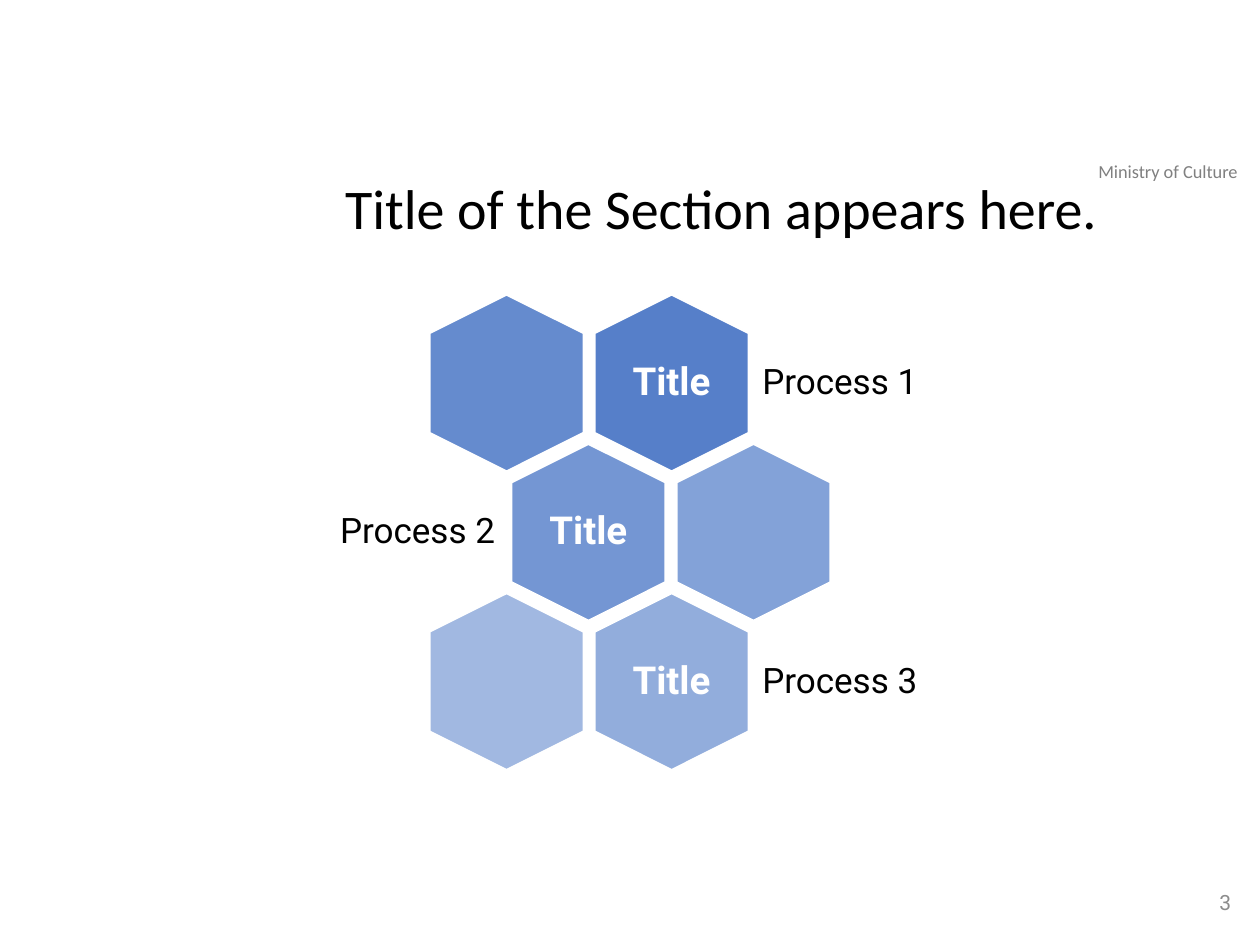
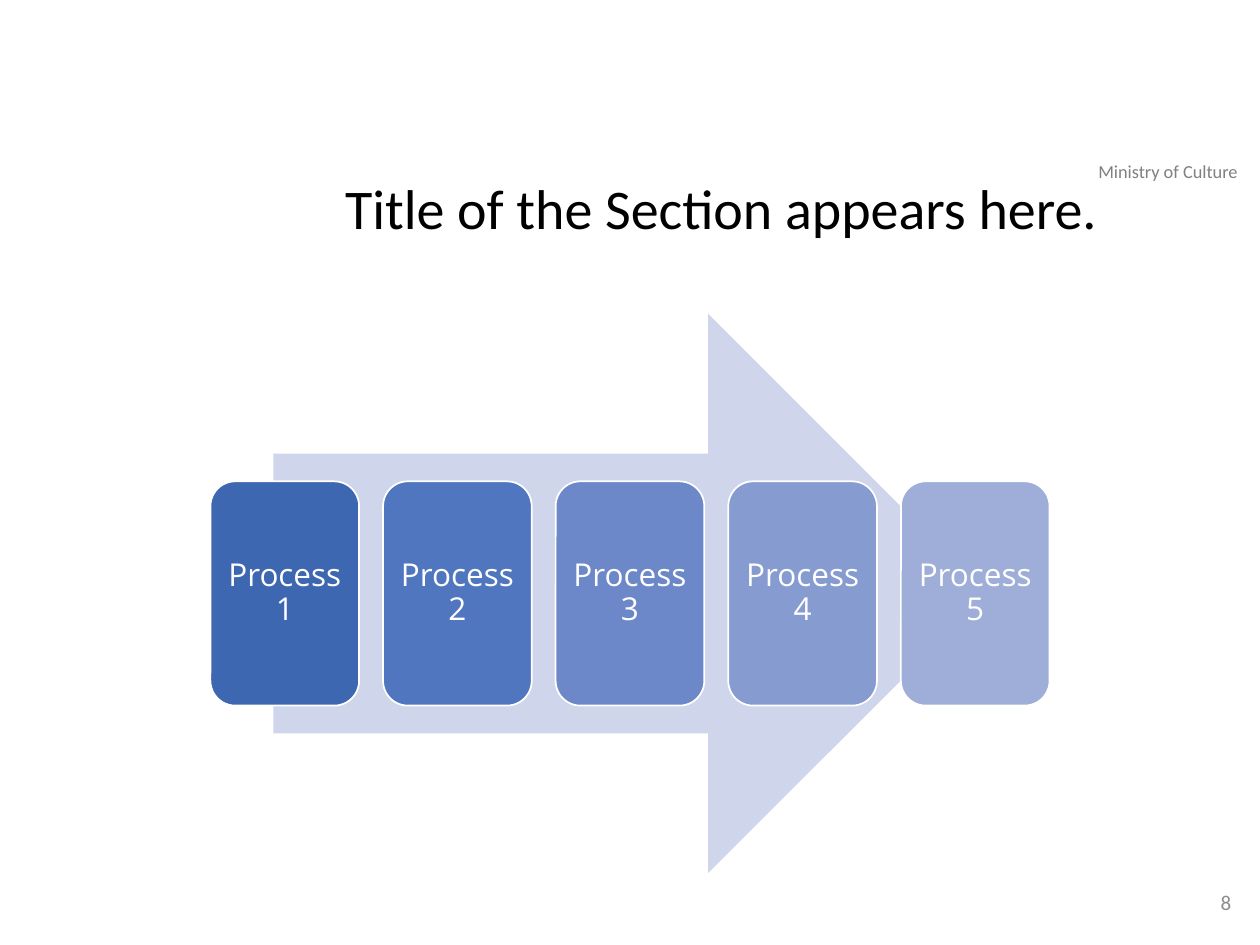
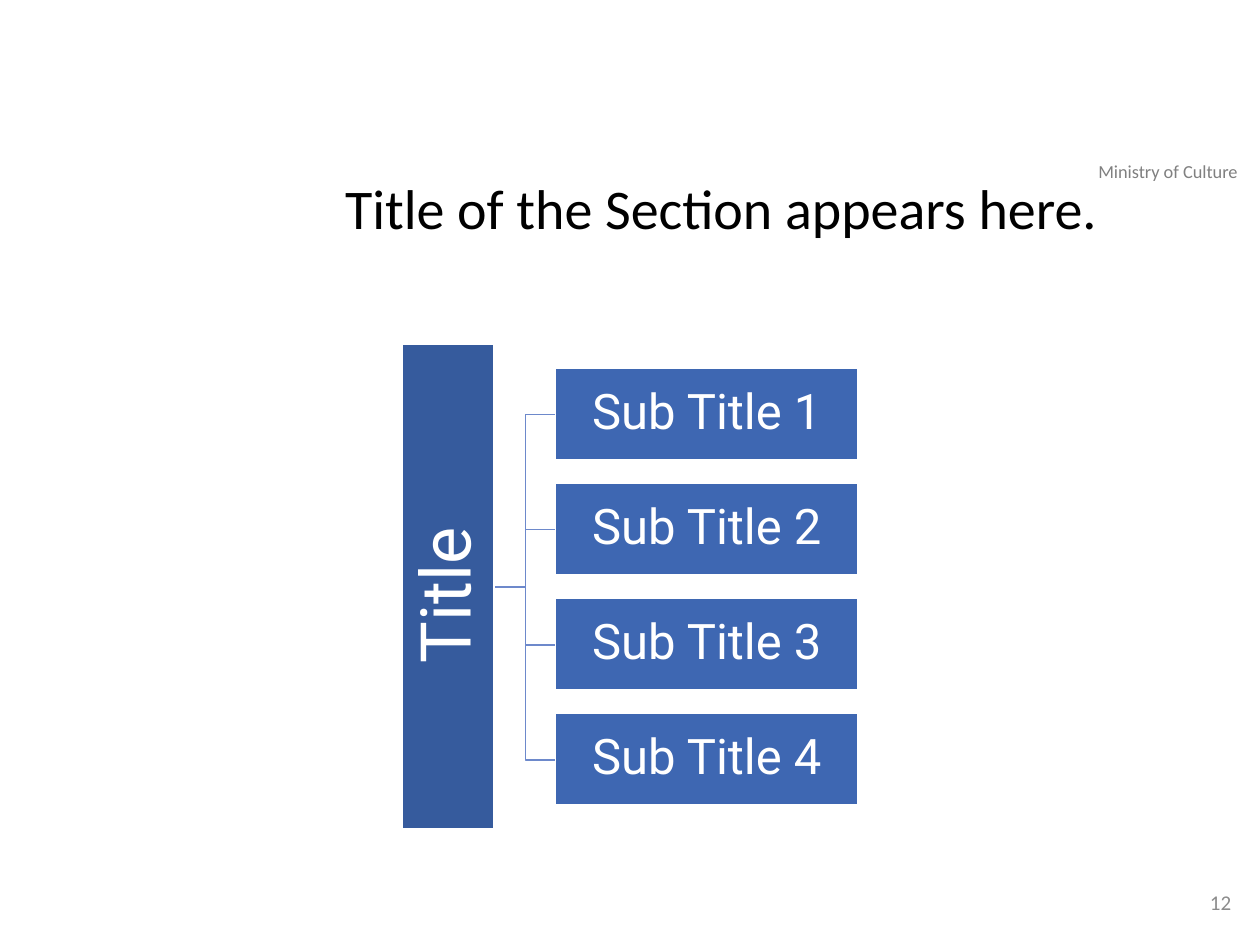
"""Build three process-diagram slides that share one heading, ministry label and page number."""
from dataclasses import dataclass

from lxml import etree
from pptx import Presentation
from pptx import util as u
from pptx.dml.color import RGBColor
from pptx.enum import shapes, text
from pptx.oxml.ns import qn


@dataclass(frozen=True)
class Theme:
    white: str = "FFFFFF"
    black: str = "000000"
    ministry: str = "808080"
    page: str = "8C8C8C"
    hexagon: str = "4472C4"
    arrow: str = "CFD5EA"
    steps: tuple = ("3E67B2", "5176C0", "6C88C8", "869BD0", "9FAED8")
    trunk: str = "365B9D"
    branch: str = "3E67B2"
    link: str = "6D89CB"
    heading_size: float = 32
    ministry_size: float = 10.5
    page_size: float = 12
    hexagon_size: float = 22
    label_size: float = 20
    step_size: float = 18
    trunk_size: float = 40
    branch_size: float = 28
    plain: str = "Calibri"
    display: str = "Roboto"
    step_font: str = "Open Sans"


theme = Theme()
LEFT, CENTER, RIGHT = text.PP_ALIGN.LEFT, text.PP_ALIGN.CENTER, text.PP_ALIGN.RIGHT
TOP, MIDDLE = text.MSO_ANCHOR.TOP, text.MSO_ANCHOR.MIDDLE


def write(holder, words, size, color=theme.white, font=theme.display, bold=False,
          align=CENTER, anchor=MIDDLE, inset=(0.1, 0.05), spacing=0.9):
    frame = holder.text_frame
    frame.word_wrap = True
    frame.vertical_anchor = anchor
    frame.margin_left = frame.margin_right = u.Inches(inset[0])
    frame.margin_top = frame.margin_bottom = u.Inches(inset[1])
    line = frame.paragraphs[0]
    line.alignment = align
    line.line_spacing = spacing
    run = line.add_run()
    run.text = words
    run.font.size = u.Pt(size)
    run.font.name = font
    run.font.bold = bold
    run.font.color.rgb = RGBColor.from_string(color)


def draw(slide, kind, box, fill, outline=theme.white, turn=0, opacity=100):
    figure = slide.shapes.add_shape(kind, *map(u.Inches, box))
    figure.shadow.inherit = False
    figure.rotation = turn
    figure.fill.solid()
    figure.fill.fore_color.rgb = RGBColor.from_string(fill)
    if opacity < 100:
        tint = figure._element.spPr.find(qn("a:solidFill"))[0]
        etree.SubElement(tint, qn("a:alpha"), val=str(opacity * 1000))
    if outline:
        figure.line.color.rgb = RGBColor.from_string(outline)
        figure.line.width = u.Pt(1)
    else:
        figure.line.fill.background()
    return figure


deck = Presentation()
deck.slide_width, deck.slide_height = u.Inches(10), u.Inches(7.5)

pages = []
for number, number_font in (("3", theme.display), ("8", theme.plain), ("12", theme.plain)):
    slide = deck.slides.add_slide(deck.slide_layouts[6])
    ministry = slide.shapes.add_textbox(*map(u.Inches, (8.18, 1.22, 2.18, 0.28)))
    write(ministry, "Ministry of Culture", theme.ministry_size, theme.ministry,
          theme.plain, anchor=TOP, spacing=1.0)
    heading = slide.shapes.add_textbox(*map(u.Inches, (2.64, 1.39, 6.62, 0.79)))
    write(heading, "Title of the Section appears here.", theme.heading_size, theme.black,
          theme.plain, align=LEFT, anchor=TOP)
    page = slide.shapes.add_textbox(*map(u.Inches, (7.62, 6.96, 2.25, 0.4)))
    write(page, number, theme.page_size, theme.page, number_font, align=RIGHT, spacing=1.0)
    pages.append(slide)

honeycomb, arrow_flow, hierarchy = pages

honeycomb_rows = (
    (3.32, (82, 90), 1, "Process 1", 5.97, 1.56, LEFT),
    (3.97, (74, 66), 0, "Process 2", 2.5, 1.51, RIGHT),
    (3.32, (50, 58), 1, "Process 3", 5.97, 1.56, LEFT),
)
for row, (left, opacities, titled, process, label_left, label_width, align) in enumerate(honeycomb_rows):
    top = 2.43 + row * 1.185
    for column, opacity in enumerate(opacities):
        draw(honeycomb, shapes.MSO_SHAPE.HEXAGON, (left + column * 1.31, top, 1.4, 1.22),
             theme.hexagon, turn=90, opacity=opacity)
    title = honeycomb.shapes.add_textbox(
        *map(u.Inches, (left + titled * 1.31 + 0.28, top + 0.13, 0.84, 0.96)))
    write(title, "Title", theme.hexagon_size, bold=True, inset=(0.09, 0.09))
    label = honeycomb.shapes.add_textbox(
        *map(u.Inches, (label_left, top + 0.19, label_width, 0.84)))
    write(label, process, theme.label_size, theme.black, align=align, inset=(0.08, 0.08))

draw(arrow_flow, shapes.MSO_SHAPE.RIGHT_ARROW, (2.17, 2.49, 5.67, 4.44), theme.arrow, outline=None)
for index, color in enumerate(theme.steps):
    step = draw(arrow_flow, shapes.MSO_SHAPE.ROUNDED_RECTANGLE,
                (1.67 + index * 1.37, 3.82, 1.18, 1.78), color)
    write(step, f"Process {index + 1}", theme.step_size, font=theme.step_font, inset=(0.07, 0.07))

branch_tops = [2.92 + index * (5.66 - 2.92) / 3 for index in range(4)]
for top in branch_tops:
    middle = top + 0.37
    bends = [(4.17, 4.66), (4.17, middle), (4.41, middle)]
    route = hierarchy.shapes.build_freeform(u.Inches(3.93), u.Inches(4.66))
    route.add_line_segments([(u.Inches(x), u.Inches(y)) for x, y in bends], close=False)
    link = route.convert_to_shape()
    link.shadow.inherit = False
    link.fill.background()
    link.line.color.rgb = RGBColor.from_string(theme.link)
    link.line.width = u.Pt(1)

trunk = draw(hierarchy, shapes.MSO_SHAPE.RECTANGLE, (1.63, 4.29, 3.85, 0.73), theme.trunk, turn=270)
write(trunk, "Title ", theme.trunk_size, inset=(0.03, 0.03))
for index, top in enumerate(branch_tops):
    branch = draw(hierarchy, shapes.MSO_SHAPE.RECTANGLE, (4.41, top, 2.4, 0.73), theme.branch)
    write(branch, f"Sub Title {index + 1}", theme.branch_size, inset=(0.02, 0.02))

deck.save("out.pptx")
